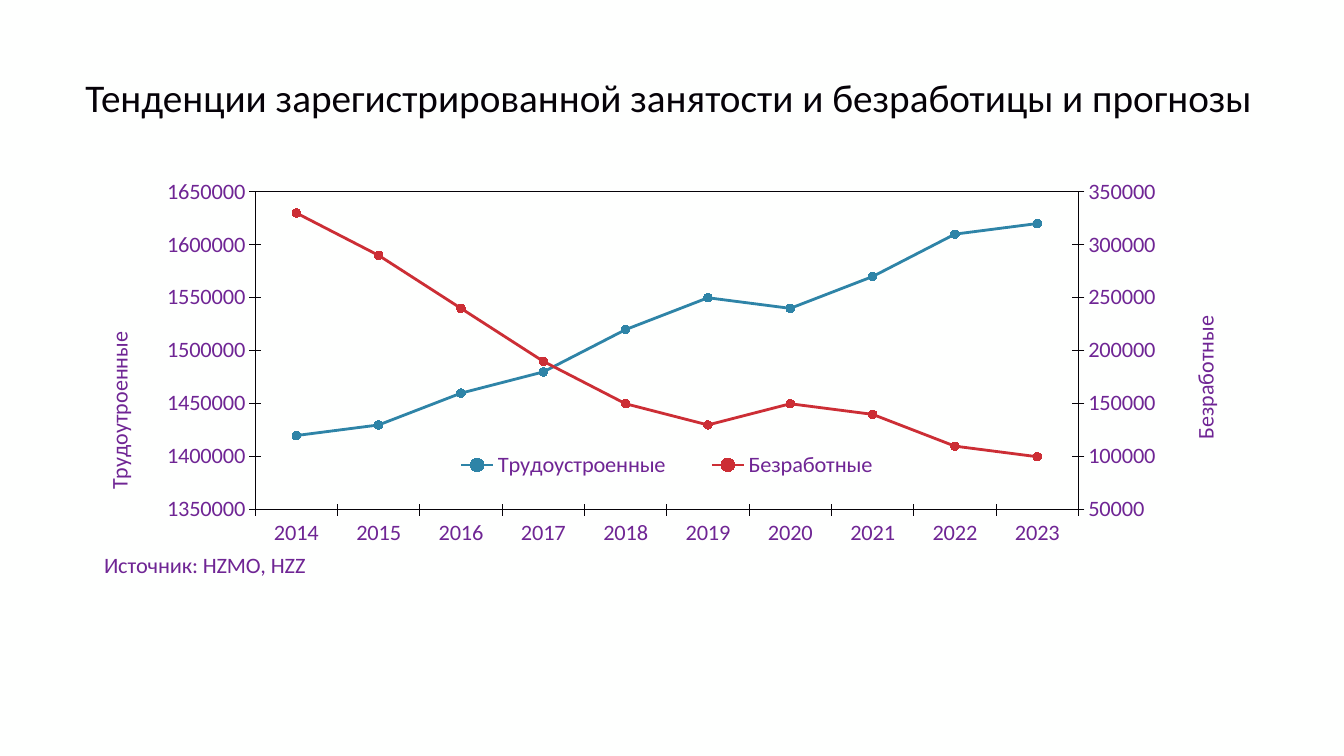
from copy import deepcopy

from pptx import Presentation
from pptx.chart.axis import ValueAxis
from pptx.chart.data import CategoryChartData
from pptx.dml.color import RGBColor
from pptx.enum.chart import XL_CHART_TYPE, XL_LEGEND_POSITION, XL_MARKER_STYLE, XL_TICK_MARK
from pptx.enum.text import MSO_ANCHOR, MSO_AUTO_SIZE, PP_ALIGN
from pptx.oxml import parse_xml
from pptx.oxml.ns import nsdecls, qn
from pptx.util import Cm, Pt

LINE_MARKERS = XL_CHART_TYPE.LINE_MARKERS
BOTTOM = XL_LEGEND_POSITION.BOTTOM
CIRCLE = XL_MARKER_STYLE.CIRCLE
CROSS = XL_TICK_MARK.CROSS
MIDDLE = MSO_ANCHOR.MIDDLE
NO_FIT = MSO_AUTO_SIZE.NONE
LEFT = PP_ALIGN.LEFT

FONT = "Calibri"
INK, PURPLE, PAPER = "060208", "6F2594", "FEFFFE"
YEARS = [str(year) for year in range(2014, 2024)]
SERIES = [
    ("Трудоустроенные", "2E84A7",
     [1420000, 1430000, 1460000, 1480000, 1520000, 1550000, 1540000, 1570000, 1610000, 1620000]),
    ("Безработные", "CC2E35",
     [330000, 290000, 240000, 190000, 150000, 130000, 150000, 140000, 110000, 100000]),
]


def rgb(value):
    """Return the colour for a hex string."""
    return RGBColor.from_string(value)


def set_font(font, size, color):
    """Apply the slide font in a size and colour."""
    font.name, font.size, font.bold = FONT, Pt(size), False
    font.color.rgb = rgb(color)


def set_line(line, color, width):
    """Give a line a colour and a width in points."""
    line.color.rgb = rgb(color)
    line.width = Pt(width)


def set_layout(parent, index, inner=False, **place):
    """Place a chart part by fractions of the chart area."""
    for old in parent.findall(qn("c:layout")):
        parent.remove(old)
    target = '<c:layoutTarget val="inner"/>' if inner else ""
    modes = "".join(f'<c:{k}Mode val="edge"/>' for k in "xy")
    sizes = "".join(f'<c:{k} val="{v}"/>' for k, v in place.items())
    parent.insert(index, parse_xml(
        f'<c:layout {nsdecls("c")}><c:manualLayout>{target}{modes}{sizes}'
        "</c:manualLayout></c:layout>"))


def style_axis(axis, text, x, y):
    """Format an axis and place its title."""
    axis.has_major_gridlines = False
    axis.major_tick_mark = CROSS
    set_line(axis.format.line, INK, 0.75)
    set_font(axis.tick_labels.font, 16, PURPLE)
    title = axis.axis_title
    p = title.text_frame.paragraphs[0]
    p.text = text
    set_font(p.font, 16, PURPLE)
    set_layout(title.element, 1, x=x, y=y)


def style_value_axis(axis, text, x, y, low, high):
    """Format a value axis with its scale and upright title."""
    style_axis(axis, text, x, y)
    axis.minimum_scale, axis.maximum_scale = low, high
    axis.major_unit = 50000
    axis.tick_labels.number_format = "0"
    axis.tick_labels.number_format_is_linked = False
    body = axis.axis_title.element.find(".//" + qn("a:bodyPr"))
    body.set("rot", "-5400000")
    body.set("vert", "horz")


def split_value_axes(chart):
    """Move the last series to a second axis and return both value axes."""
    line = chart.element.xpath(".//c:lineChart")[0]
    cat = chart.element.xpath(".//c:catAx")[0]
    val = chart.element.xpath(".//c:valAx")[0]
    for old in val.findall(qn("c:crossBetween")):
        val.remove(old)
    val.find(qn("c:crosses")).addnext(
        parse_xml(f'<c:crossBetween {nsdecls("c")} val="between"/>'))
    line2, cat2, val2 = deepcopy(line), deepcopy(cat), deepcopy(val)
    line.remove(line.findall(qn("c:ser"))[1])
    line2.remove(line2.findall(qn("c:ser"))[0])
    for ref, number in zip(line2.findall(qn("c:axId")), ("5001", "5002")):
        ref.set("val", number)
    for axis, own, other in ((cat2, "5001", "5002"), (val2, "5002", "5001")):
        axis.find(qn("c:axId")).set("val", own)
        axis.find(qn("c:crossAx")).set("val", other)
    val2.find(qn("c:axPos")).set("val", "r")
    val2.find(qn("c:crosses")).set("val", "max")
    line.addnext(line2)
    val.addnext(val2)
    val2.addnext(cat2)
    type(chart.category_axis)(cat2).visible = False
    return ValueAxis(val), ValueAxis(val2)


def add_trend_chart(slide, left, top, width, height):
    """Draw employment and unemployment on two value axes."""
    data = CategoryChartData(number_format="0")
    data.categories = YEARS
    for name, _, values in SERIES:
        data.add_series(name, values)
    chart = slide.shapes.add_chart(LINE_MARKERS, left, top, width, height, data).chart
    chart.has_title = False
    set_font(chart.font, 16, INK)
    plot = chart.plots[0]
    plot.vary_by_categories = False
    for series, (_, color, _) in zip(plot.series, SERIES):
        series.smooth = False
        set_line(series.format.line, color, 2)
        marker = series.marker
        marker.style, marker.size = CIRCLE, 6
        marker.format.fill.solid()
        marker.format.fill.fore_color.rgb = rgb(color)
        set_line(marker.format.line, color, 0.75)

    employed, unemployed = split_value_axes(chart)
    style_axis(chart.category_axis, "Источник: HZMO, HZZ", 0.02, 0.92)
    style_value_axis(employed, "Трудоутроенные", 0.02, 0.39, 1350000, 1650000)
    style_value_axis(unemployed, "Безработные", 0.93, 0.35, 50000, 350000)

    chart.has_legend = True
    chart.legend.position = BOTTOM
    chart.legend.include_in_layout = False
    set_font(chart.legend.font, 16, PURPLE)
    set_layout(chart.element.xpath(".//c:legend")[0], 1, x=0.29, y=0.68, w=0.41, h=0.08)

    area = chart.element.xpath(".//c:plotArea")[0]
    set_layout(area, 0, inner=True, x=0.15, y=0.05, w=0.69, h=0.78)
    area.append(parse_xml(
        f'<c:spPr {nsdecls("c", "a")}><a:noFill/><a:ln w="6350"><a:solidFill>'
        f'<a:srgbClr val="{INK}"/></a:solidFill></a:ln></c:spPr>'))


def add_title(slide, left, top, width, height):
    """Fill the title placeholder."""
    sp = slide.shapes.title
    sp.left, sp.top, sp.width, sp.height = left, top, width, height
    tf = sp.text_frame
    tf.word_wrap, tf.auto_size, tf.vertical_anchor = True, NO_FIT, MIDDLE
    p = tf.paragraphs[0]
    p.text = "Тенденции зарегистрированной занятости и безработицы и прогнозы"
    p.alignment = LEFT
    set_font(p.font, 28, INK)


def main():
    """Build and save the slide."""
    prs = Presentation()
    prs.slide_width, prs.slide_height = Cm(33.87), Cm(19.05)
    slide = prs.slides.add_slide(prs.slide_layouts[5])
    slide.background.fill.solid()
    slide.background.fill.fore_color.rgb = rgb(PAPER)
    add_trend_chart(slide, Cm(1.92), Cm(4.32), Cm(30.07), Cm(10.46))
    add_title(slide, Cm(1.9), Cm(1.19), Cm(30.86), Cm(2.51))
    prs.save("out.pptx")


if __name__ == "__main__":
    main()
